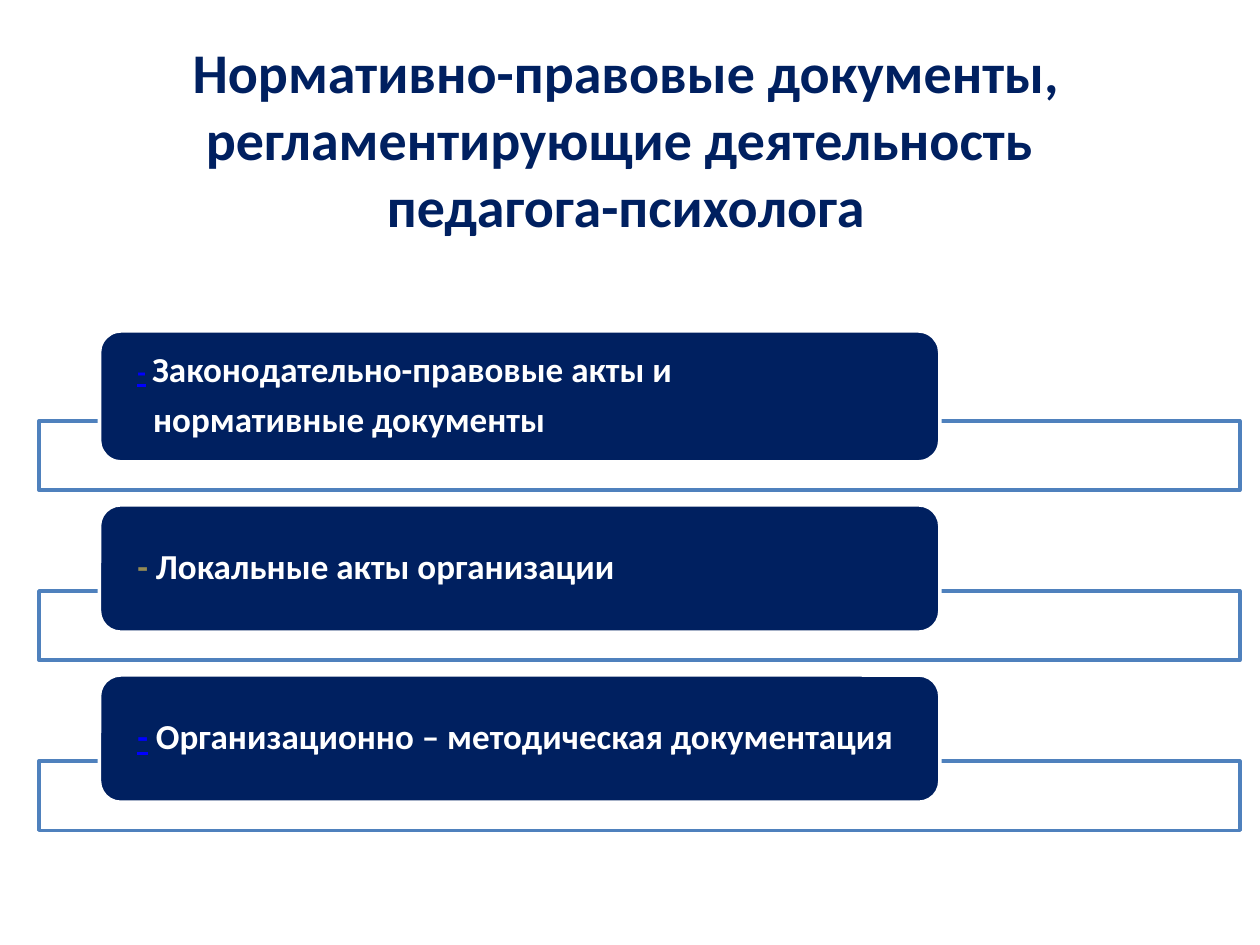
from lxml import etree
from pptx import Presentation
from pptx.dml.color import RGBColor
from pptx.enum.shapes import MSO_SHAPE
from pptx.enum.text import MSO_ANCHOR, PP_ALIGN
from pptx.oxml.ns import qn
from pptx.util import Pt

RECTANGLE, ROUNDED = MSO_SHAPE.RECTANGLE, MSO_SHAPE.ROUNDED_RECTANGLE
MIDDLE = MSO_ANCHOR.MIDDLE
LEFT, CENTER = PP_ALIGN.LEFT, PP_ALIGN.CENTER
COLORS = {
    "navy": "002060",
    "white": "FFFFFF",
    "border": "4F81BD",
    "link": "0000FF",
    "olive": "4A452A",
    "khaki": "948A54",
}


def add_span(para, text, size=20, color="white", underline=False):
    span = para.add_run()
    span.text = text
    span.font.name = "Calibri"
    span.font.size = Pt(size)
    span.font.bold = True
    span.font.underline = underline
    span.font.color.rgb = RGBColor.from_string(COLORS[color])


def add_panel(page, preset, left, top, width, height, fill, line):
    panel = page.shapes.add_shape(preset, Pt(left), Pt(top), Pt(width), Pt(height))
    panel.shadow.inherit = False
    panel.fill.solid()
    panel.fill.fore_color.rgb = RGBColor.from_string(COLORS[fill])
    panel.line.color.rgb = RGBColor.from_string(COLORS[line])
    panel.line.width = Pt(2)
    return panel


deck = Presentation()
deck.slide_width, deck.slide_height = Pt(720), Pt(540)
page = deck.slides.add_slide(deck.slide_layouts[6])

title = page.shapes.add_textbox(Pt(33.8), Pt(33.8), Pt(648), Pt(90))
title.text_frame.word_wrap = True
title.text_frame.vertical_anchor = MIDDLE
para = title.text_frame.paragraphs[0]
para.alignment = CENTER
add_span(para, "Нормативно-правовые документы, регламентирующие деятельность ", size=32, color="navy")
para.add_line_break()
add_span(para, "педагога-психолога", size=32, color="navy")

link_dash = ("-", {"color": "link", "underline": True})
small_dash = ("-", {"color": "link", "underline": True, "size": 16})
gap = (" ", {"color": "olive"})
small_gap = (" ", {"color": "olive", "size": 16})
cards = [
    (74.9, [(0, [small_dash, small_gap, ("Законодательно-правовые акты и", {})]),
            (9, [("нормативные документы", {})])]),
    (72.7, [(0, [("- ", {"color": "khaki"}), ("Локальные акты организации", {})])]),
    (72.7, [(0, [link_dash, gap, ("Организационно – методическая документация", {})])]),
]

for index, (height, lines) in enumerate(cards):
    bar_top = 240.5 + index * 97.2
    card_top = bar_top + 23.5 - height
    bar = add_panel(page, RECTANGLE, 22.3, bar_top, 686.2, 39.6, "white", "border")
    fill_color = bar.fill._xPr.find(qn("a:solidFill"))[0]
    etree.SubElement(fill_color, qn("a:alpha"), val="90000")
    add_panel(page, ROUNDED, 56.9, card_top, 480.2, height, "navy", "white")

    box = page.shapes.add_textbox(Pt(60.5), Pt(card_top + 3.6), Pt(473), Pt(height - 7.2))
    frame = box.text_frame
    frame.word_wrap = True
    frame.vertical_anchor = MIDDLE
    frame.margin_left = frame.margin_right = Pt(18)
    frame.margin_top = frame.margin_bottom = 0
    for number, (indent, spans) in enumerate(lines):
        para = frame.add_paragraph() if number else frame.paragraphs[0]
        para.alignment = LEFT
        para.line_spacing = 0.9
        para.space_after = Pt(7)
        para._p.get_or_add_pPr().set("marL", str(Pt(indent)))
        for text, style in spans:
            add_span(para, text, **style)

deck.save("out.pptx")
